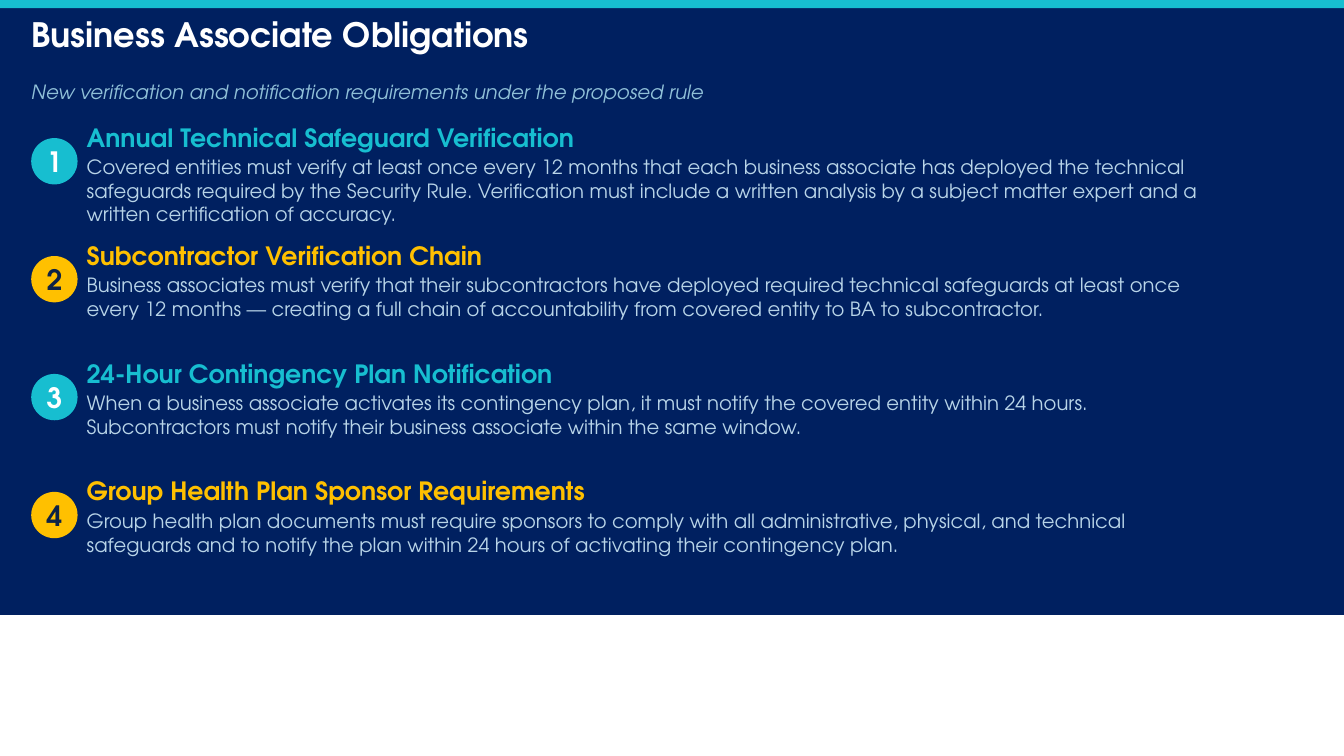
from pptx import Presentation
from pptx.dml.color import RGBColor
from pptx.enum.shapes import MSO_SHAPE
from pptx.enum.text import MSO_ANCHOR, MSO_AUTO_SIZE, PP_ALIGN
from pptx.util import Inches, Pt

NAVY = RGBColor(0x00, 0x20, 0x60)
DARK_NAVY = RGBColor(0x0D, 0x23, 0x47)
TEAL = RGBColor(0x17, 0xBE, 0xD0)
GOLD = RGBColor(0xFF, 0xC0, 0x00)
WHITE = RGBColor(0xFF, 0xFF, 0xFF)
SOFT_BLUE = RGBColor(0x90, 0xC0, 0xD8)
PALE_BLUE = RGBColor(0xB8, 0xD4, 0xE8)

SLIDE_WIDTH, SLIDE_HEIGHT = 13.33, 7.5
MARGIN = 0.31
TEXT_LEFT = 0.86
FIRST_TOP, ROW_STEP = 1.21, 1.17

# Heading and description of each obligation
OBLIGATIONS = [
    ("Annual Technical Safeguard Verification",
     "Covered entities must verify at least once every 12 months that each business "
     "associate has deployed the technical safeguards required by the Security Rule. "
     "Verification must include a written analysis by a subject matter expert and a "
     "written certification of accuracy."),
    ("Subcontractor Verification Chain",
     "Business associates must verify that their subcontractors have deployed required "
     "technical safeguards at least once every 12 months — creating a full chain of "
     "accountability from covered entity to BA to subcontractor."),
    ("24-Hour Contingency Plan Notification",
     "When a business associate activates its contingency plan, it must notify the "
     "covered entity within 24 hours. Subcontractors must notify their business "
     "associate within the same window."),
    ("Group Health Plan Sponsor Requirements",
     "Group health plan documents must require sponsors to comply with all "
     "administrative, physical, and technical safeguards and to notify the plan within "
     "24 hours of activating their contingency plan."),
]
# Badge fill and number colour, alternating by row
BADGE_COLORS = [(TEAL, WHITE), (GOLD, DARK_NAVY)]


class SlideBuilder:
    font_name = "TeX Gyre Adventor"

    def __init__(self, slide):
        self.slide = slide

    def set_text(self, shape, text, size, color, bold=False, italic=False,
                 align=PP_ALIGN.LEFT, anchor=MSO_ANCHOR.TOP):
        frame = shape.text_frame
        frame.text = text
        frame.word_wrap = True
        frame.auto_size = MSO_AUTO_SIZE.NONE
        frame.vertical_anchor = anchor
        frame.margin_left = frame.margin_right = 0
        frame.margin_top = frame.margin_bottom = 0
        para = frame.paragraphs[0]
        para.alignment = align
        font = para.runs[0].font
        font.name, font.size = self.font_name, Pt(size)
        font.bold, font.italic = bold, italic
        font.color.rgb = color

    def title(self, text, left, top, width, height):
        title = self.slide.shapes.title
        title.left, title.top = Inches(left), Inches(top)
        title.width, title.height = Inches(width), Inches(height)
        self.set_text(title, text, 24, WHITE, bold=True)
        # Bring the title in front of the background panel
        title.element.getparent().append(title.element)

    def text(self, text, left, top, width, height, size, color, **style):
        box = self.slide.shapes.add_textbox(
            Inches(left), Inches(top), Inches(width), Inches(height))
        self.set_text(box, text, size, color, **style)

    def shape(self, kind, left, top, width, height, fill):
        shape = self.slide.shapes.add_shape(
            kind, Inches(left), Inches(top), Inches(width), Inches(height))
        shape.shadow.inherit = False
        shape.fill.solid()
        shape.fill.fore_color.rgb = fill
        shape.line.fill.background()
        return shape

    def badge(self, number, left, top, size, fill, color):
        circle = self.shape(MSO_SHAPE.OVAL, left, top, size, size, fill)
        self.set_text(circle, str(number), 20, color, bold=True,
                      align=PP_ALIGN.CENTER, anchor=MSO_ANCHOR.MIDDLE)


def main():
    deck = Presentation()
    deck.slide_width, deck.slide_height = Inches(SLIDE_WIDTH), Inches(SLIDE_HEIGHT)
    builder = SlideBuilder(deck.slides.add_slide(deck.slide_layouts[5]))

    # Background panel and top accent
    panel = builder.shape(MSO_SHAPE.RECTANGLE, 0, 0, SLIDE_WIDTH, 6.1, NAVY)
    panel.line.color.rgb = NAVY
    panel.line.width = Pt(0.75)
    builder.shape(MSO_SHAPE.RECTANGLE, 0, 0, SLIDE_WIDTH, 0.08, TEAL)

    # Title and subtitle
    builder.title("Business Associate Obligations", MARGIN, 0.14, 11.78, 0.57)
    builder.text("New verification and notification requirements under the proposed rule",
                 MARGIN, 0.79, 9.09, 0.25, 14, SOFT_BLUE, italic=True)

    # Numbered obligations
    for index, (heading, description) in enumerate(OBLIGATIONS):
        top = FIRST_TOP + index * ROW_STEP
        fill, number_color = BADGE_COLORS[index % len(BADGE_COLORS)]
        builder.badge(index + 1, MARGIN, top + 0.16, 0.46, fill, number_color)
        builder.text(heading, TEXT_LEFT, top, 5.19, 0.31, 18, fill, bold=True)
        builder.text(description, TEXT_LEFT, top + 0.33, 11.31, 0.63, 14, PALE_BLUE)

    deck.save("out.pptx")


if __name__ == "__main__":
    main()
